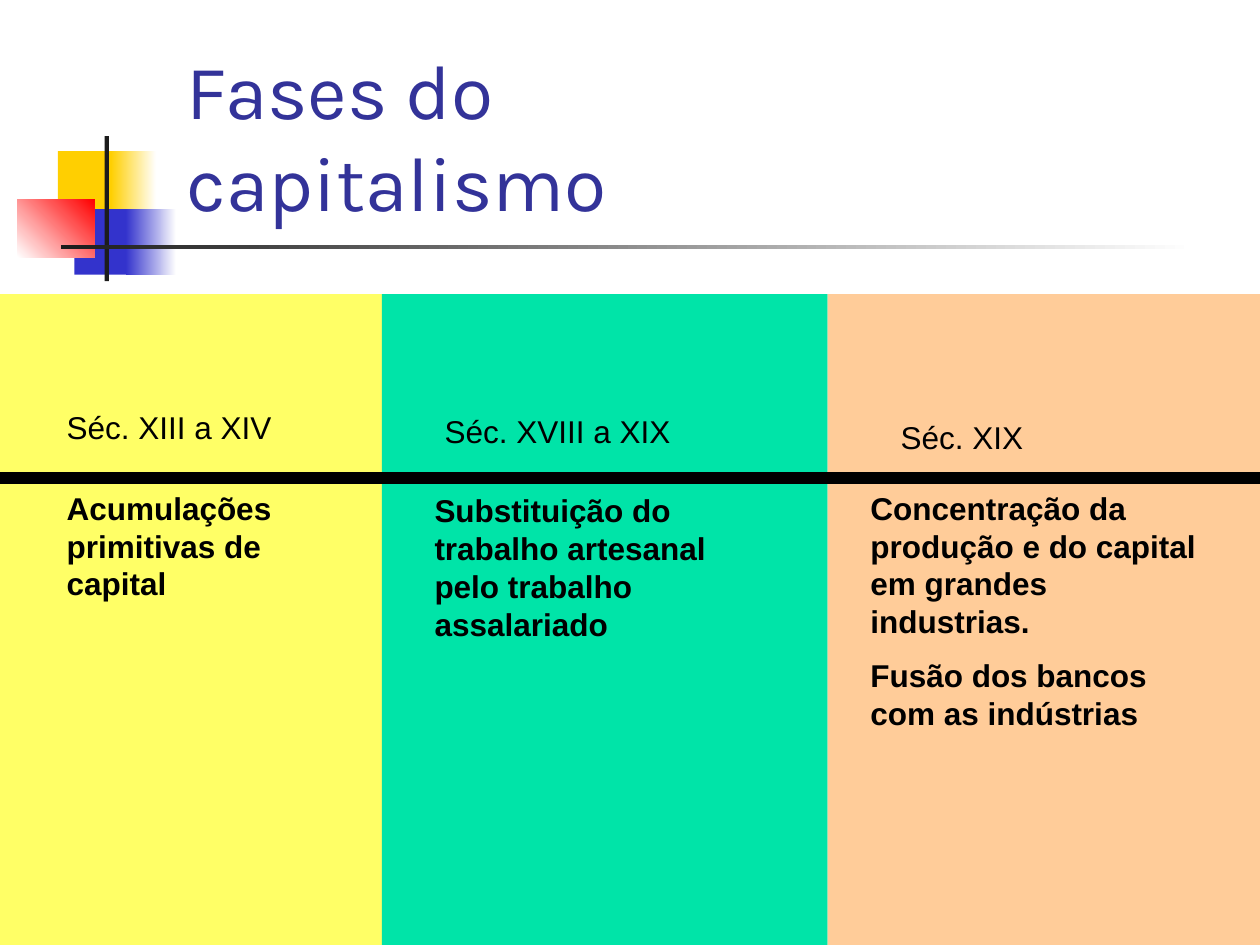
"""Builds the slide on the phases of capitalism."""
from pptx import Presentation
from pptx.dml.color import RGBColor
from pptx.enum.shapes import MSO_CONNECTOR, MSO_SHAPE
from pptx.enum.text import MSO_ANCHOR, PP_ALIGN
from pptx.oxml.ns import qn
from pptx.util import Pt
from lxml import etree

RECTANGLE = MSO_SHAPE.RECTANGLE
STRAIGHT = MSO_CONNECTOR.STRAIGHT
BOTTOM = MSO_ANCHOR.BOTTOM
LEFT = PP_ALIGN.LEFT

WIDTH, HEIGHT = 720, 540
COLUMN_TOP = 168
RULE_TOP, RULE_HEIGHT = 270, 6
TITLE = "Fases do capitalismo"
TITLE_BOX = (99.4, 43.2, 415.4, 90)

ORNAMENTS = [
    ((33.1, 86.4, 34.6, 37.4), ("FFCF01",), 0),
    ((63.4, 86.4, 25.9, 37.4), ("FFCF01", "FFFFFF"), 0),
    ((42.5, 119.5, 33.1, 37.4), ("3333CC",), 0),
    ((72, 119.5, 28.8, 37.4), ("3333CC", "FFFFFF"), 0),
    ((10, 113.8, 44, 33.1), ("FFFFFF", "FF0000"), 45),
    ((59.8, 77.8, 2.5, 82.8), ("1C1C1C",), 0),
    ((34.6, 140, 648, 2.5), ("1C1C1C", "FFFFFF"), 0),
]

PHASES = [
    {"left": 0, "color": "FFFF66",
     "period": "Séc. XIII a XIV", "period_box": (31, 229.7, 144.7, 28.8),
     "points": ["Acumulações primitivas de capital"],
     "points_box": (31, 275.8, 155.5, 72)},
    {"left": 218.2, "color": "00E4A8",
     "period": "Séc. XVIII a XIX", "period_box": (247, 231.8, 144.7, 28.8),
     "points": ["Substituição do trabalho artesanal pelo trabalho assalariado"],
     "points_box": (241.2, 277.2, 209.5, 93.6)},
    {"left": 473, "color": "FFCC99",
     "period": "Séc. XIX", "period_box": (507.6, 235.4, 144.7, 28.8),
     "points": ["Concentração da produção e do capital em grandes industrias.",
                "Fusão dos bancos com as indústrias"],
     "points_box": (490.3, 275.8, 209.5, 147.6)},
]


def rgb(value):
    return RGBColor.from_string(value)


def points(box):
    return [Pt(length) for length in box]


def add_rectangle(slide, box, colors, angle=0):
    shape = slide.shapes.add_shape(RECTANGLE, *points(box))
    shape.shadow.inherit = False
    shape.line.fill.background()
    if len(colors) == 1:
        shape.fill.solid()
        shape.fill.fore_color.rgb = rgb(colors[0])
    else:
        shape.fill.gradient()
        shape.fill.gradient_angle = angle
        for stop, color in zip(shape.fill.gradient_stops, colors):
            stop.color.rgb = rgb(color)
    return shape


def outline(line):
    line.color.rgb = rgb("000000")
    line.width = Pt(0.75)


def style(paragraph, name, size, color, bold=False):
    font = paragraph.font
    font.name, font.size, font.bold = name, Pt(size), bold
    font.color.rgb = rgb(color)
    paragraph.alignment = LEFT


def add_text(slide, box, lines, bold=False):
    frame = slide.shapes.add_textbox(*points(box)).text_frame
    frame.word_wrap = True
    frame.text = "\n".join(lines)
    for index, paragraph in enumerate(frame.paragraphs):
        style(paragraph, "Arial", 18, "000000", bold)
        if index:
            paragraph.space_before = Pt(9)


def add_title(slide):
    title = slide.shapes.title
    title.left, title.top, title.width, title.height = points(TITLE_BOX)
    frame = title.text_frame
    frame.text = TITLE
    frame.word_wrap = True
    frame.vertical_anchor = BOTTOM
    style(frame.paragraphs[0], "Karla", 44, "333399")


def add_rule(slide):
    bottom = Pt(RULE_TOP + RULE_HEIGHT)
    connector = slide.shapes.add_connector(STRAIGHT, 0, bottom, Pt(WIDTH), bottom)
    outline(connector.line)
    etree.SubElement(connector._element.spPr, qn("a:effectLst"))
    bar = add_rectangle(slide, (0, RULE_TOP, WIDTH, RULE_HEIGHT), ("000000",))
    outline(bar.line)


def main():
    presentation = Presentation()
    presentation.slide_width, presentation.slide_height = Pt(WIDTH), Pt(HEIGHT)
    slide = presentation.slides.add_slide(presentation.slide_layouts[5])
    for box, colors, angle in ORNAMENTS:
        add_rectangle(slide, box, colors, angle)
    add_title(slide)
    rights = [phase["left"] for phase in PHASES[1:]] + [WIDTH]
    for phase, right in zip(PHASES, rights):
        left = phase["left"]
        box = (left, COLUMN_TOP, right - left, HEIGHT - COLUMN_TOP)
        add_rectangle(slide, box, (phase["color"],))
        add_text(slide, phase["period_box"], [phase["period"]])
        add_text(slide, phase["points_box"], phase["points"], bold=True)
    add_rule(slide)
    presentation.save("out.pptx")


if __name__ == "__main__":
    main()
